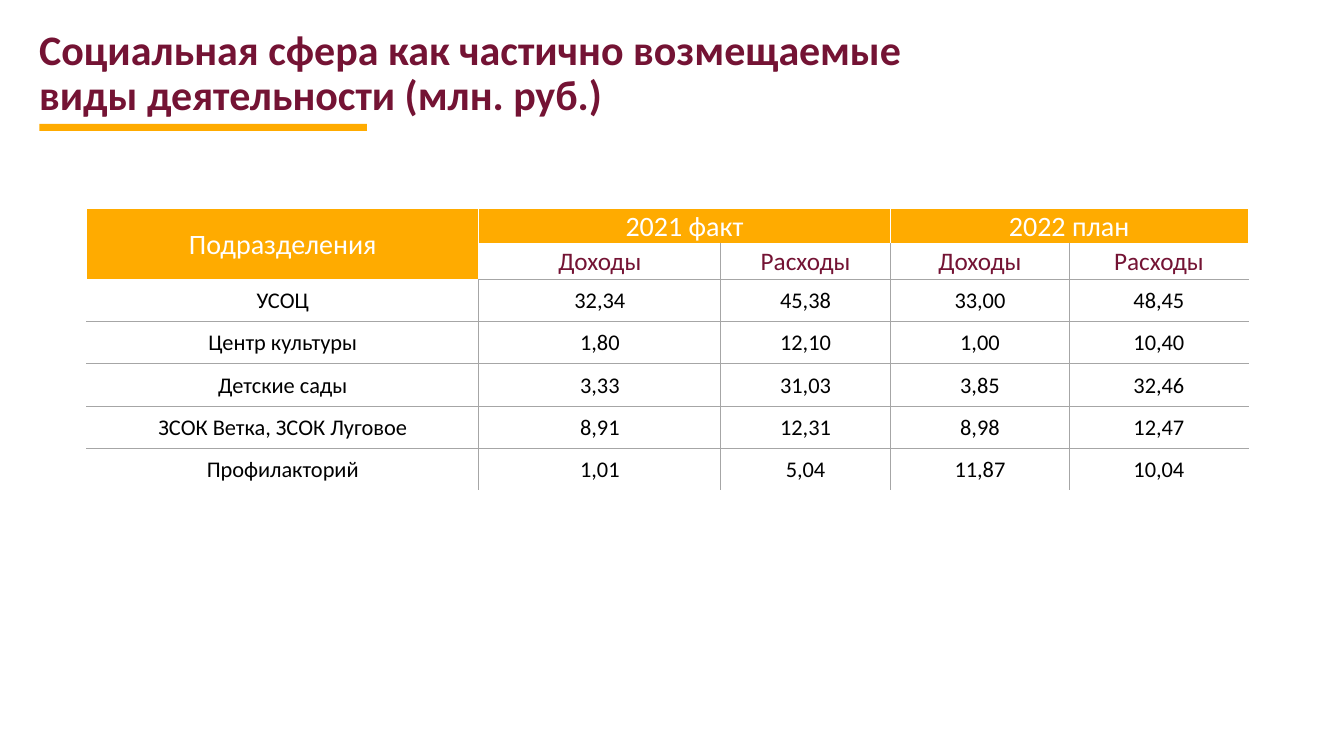
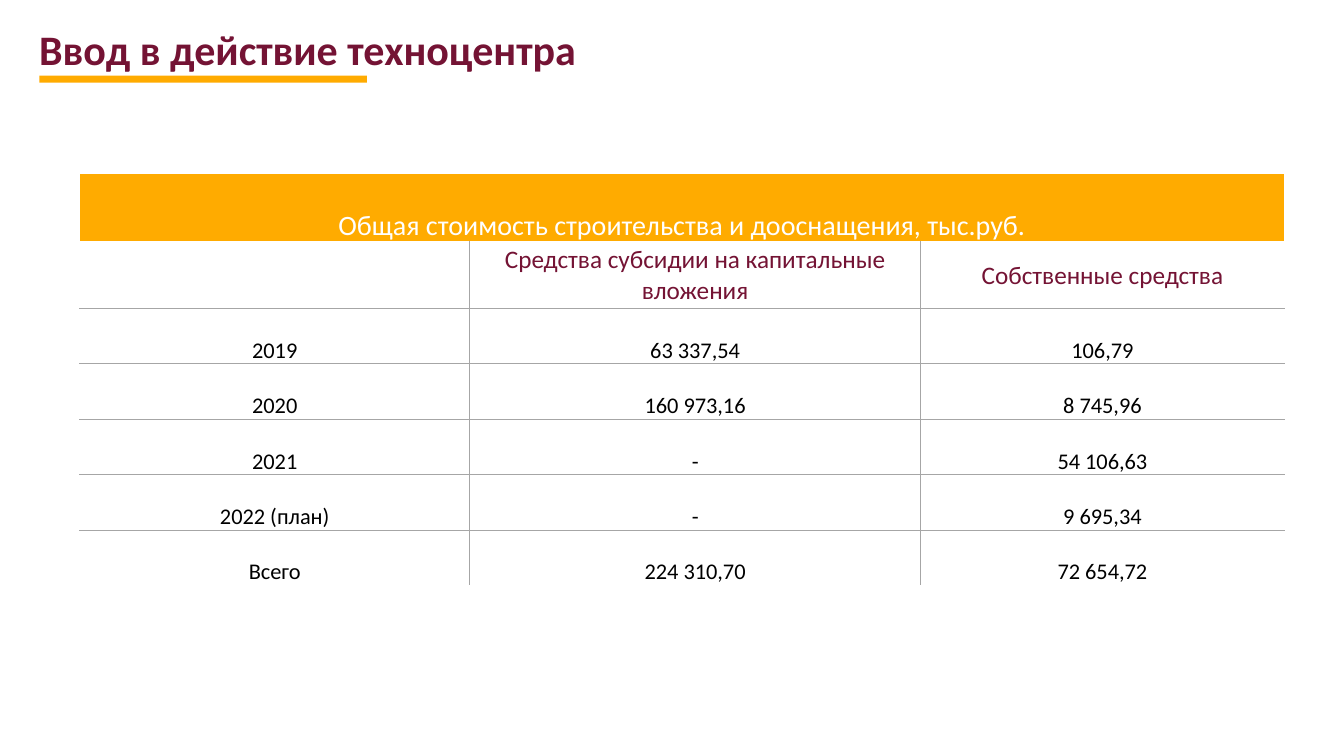
from lxml.etree import SubElement
from pptx import Presentation
from pptx.dml.color import RGBColor
from pptx.enum.shapes import MSO_SHAPE
from pptx.enum.text import MSO_ANCHOR, PP_ALIGN
from pptx.oxml.ns import qn
from pptx.util import Pt

PX = 9144  # 100 px to the inch
FONT = "Calibri"
BURGUNDY = RGBColor(0x74, 0x13, 0x34)
AMBER = RGBColor(0xFF, 0xAB, 0x00)
GREY = RGBColor(0xA6, 0xA6, 0xA6)
WHITE = RGBColor(0xFF, 0xFF, 0xFF)
BLACK = RGBColor(0x00, 0x00, 0x00)
# Border tag, then row and column step to the neighbouring cell
SIDES = [("a:lnL", 0, -1), ("a:lnR", 0, 1), ("a:lnT", -1, 0), ("a:lnB", 1, 0)]

# "headers" maps the first cell of each amber block to its rows and columns
SLIDES = [
    {
        "title": "Социальная сфера как частично возмещаемые виды деятельности (млн. руб.)",
        "title_size": (927, 99),
        "table_at": (86, 207),
        "columns": [389, 240, 168, 178, 177],
        "rows": [35, 35] + [42] * 5,
        "headers": {(0, 0): (2, 1), (0, 1): (1, 2), (0, 3): (1, 2)},
        "spacing": 1.0,
        "cells": [
            ["Подразделения", "2021 факт", "", "2022 план", ""],
            ["", "Доходы", "Расходы", "Доходы", "Расходы"],
            ["УСОЦ", "32,34", "45,38", "33,00", "48,45"],
            ["Центр культуры", "1,80", "12,10", "1,00", "10,40"],
            ["Детские сады", "3,33", "31,03", "3,85", "32,46"],
            ["ЗСОК Ветка, ЗСОК Луговое", "8,91", "12,31", "8,98", "12,47"],
            ["Профилакторий", "1,01", "5,04", "11,87", "10,04"],
        ],
    },
    {
        "title": "Ввод в действие техноцентра",
        "title_size": (871, 51),
        "table_at": (79, 172),
        "columns": [387, 447, 361],
        "rows": [68, 66] + [55] * 5,
        "headers": {(0, 0): (1, 3)},
        "spacing": 2.0,
        "cells": [
            ["Общая стоимость строительства и дооснащения, тыс.руб.", "", ""],
            ["", "Средства субсидии на капитальные вложения", "Собственные средства"],
            ["2019", "63 337,54", "106,79"],
            ["2020", "160 973,16", "8 745,96"],
            ["2021", "-", "54 106,63"],
            ["2022 (план)", "-", "9 695,34"],
            ["Всего", "224 310,70", "72 654,72"],
        ],
    },
]


def write_text(frame, text, *, size, color, bold=False, align=PP_ALIGN.LEFT, spacing=1.0):
    paragraph = frame.paragraphs[0]
    paragraph.alignment = align
    paragraph.line_spacing = spacing
    run = paragraph.add_run()
    run.text = text
    run.font.name = FONT
    run.font.size = Pt(size)
    run.font.bold = bold
    run.font.color.rgb = color


def add_border(cell, tag, color):
    line = SubElement(cell._tc.get_or_add_tcPr(), qn(tag), w=str(Pt(1)))
    fill = SubElement(line, qn("a:solidFill"))
    SubElement(fill, qn("a:srgbClr"), val=str(color))


presentation = Presentation()
presentation.slide_width = 1333 * PX
presentation.slide_height = 750 * PX

for content in SLIDES:
    slide = presentation.slides.add_slide(presentation.slide_layouts[6])

    # Title with the amber rule below it
    title_left, title_top = 29, 24
    title_width, title_height = content["title_size"]
    title = slide.shapes.add_textbox(
        title_left * PX, title_top * PX, title_width * PX, title_height * PX)
    title.text_frame.word_wrap = True
    write_text(title.text_frame, content["title"],
               size=30, color=BURGUNDY, bold=True, spacing=0.9)
    rule = slide.shapes.add_shape(
        MSO_SHAPE.RECTANGLE, 39 * PX, (title_top + title_height) * PX, 325 * PX, 7 * PX)
    rule.shadow.inherit = False
    rule.fill.solid()
    rule.fill.fore_color.rgb = AMBER
    rule.line.fill.background()

    # Table grid
    columns, rows = content["columns"], content["rows"]
    left, top = content["table_at"]
    table = slide.shapes.add_table(
        len(rows), len(columns), left * PX, top * PX,
        sum(columns) * PX, sum(rows) * PX).table
    table.first_row = False
    table.horz_banding = False
    for column, width in zip(table.columns, columns):
        column.width = width * PX
    for row, height in zip(table.rows, rows):
        row.height = height * PX

    amber_cells = set()
    for (row, column), (row_span, column_span) in content["headers"].items():
        last_row, last_column = row + row_span - 1, column + column_span - 1
        table.cell(row, column).merge(table.cell(last_row, last_column))
        amber_cells.update((r, c) for r in range(row, last_row + 1)
                           for c in range(column, last_column + 1))

    for row, texts in enumerate(content["cells"]):
        for column, text in enumerate(texts):
            cell = table.cell(row, column)
            cell.vertical_anchor = MSO_ANCHOR.MIDDLE
            cell.margin_left = cell.margin_right = cell.margin_top = PX
            cell.margin_bottom = 0

            # Lines are white at the table's edge and around amber cells
            is_amber = (row, column) in amber_cells
            for tag, row_step, column_step in SIDES:
                neighbour = (row + row_step, column + column_step)
                inside = 0 <= neighbour[0] < len(rows) and 0 <= neighbour[1] < len(columns)
                is_white = is_amber or not inside or neighbour in amber_cells
                add_border(cell, tag, WHITE if is_white else GREY)
            cell.fill.solid()
            cell.fill.fore_color.rgb = AMBER if is_amber else WHITE

            if not text:
                continue
            if is_amber:
                size, color = 20, WHITE
            elif row == 1:
                size, color = 18, BURGUNDY
            else:
                size, color = 16, BLACK
            write_text(cell.text_frame, text, size=size, color=color, align=PP_ALIGN.CENTER,
                       spacing=1.0 if row == 1 else content["spacing"])

presentation.save("out.pptx")
